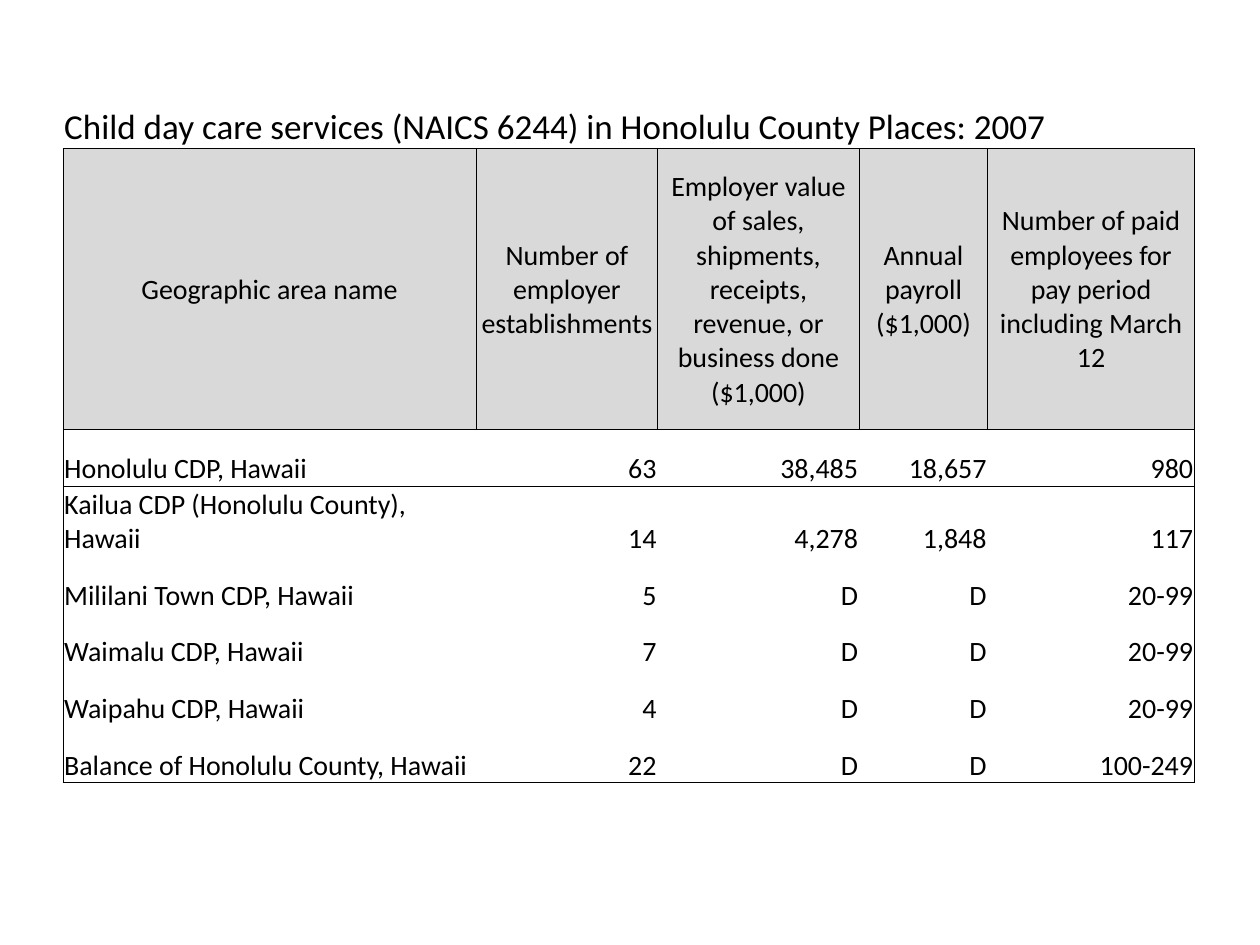
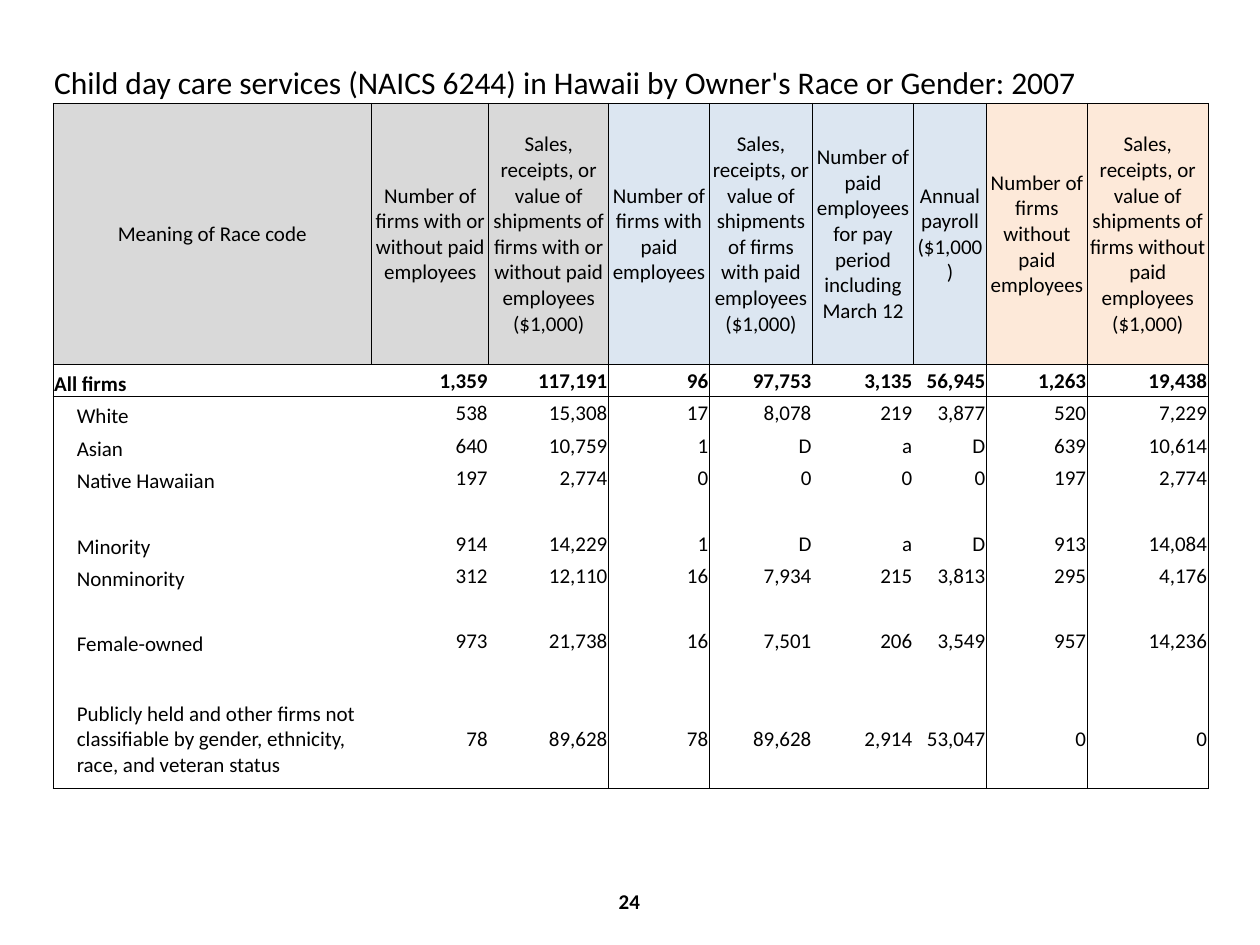
from lxml.etree import SubElement
from pptx import Presentation
from pptx.dml.color import RGBColor
from pptx.enum.text import MSO_ANCHOR, PP_ALIGN
from pptx.oxml.ns import qn
from pptx.util import Inches, Pt

COLORS = {"ink": "000000", "grey": "D9D9D9", "blue": "DCE6F1", "peach": "FDE9D9"}
FONT = "Calibri"
RULE = Pt(0.5)
PLAIN_STYLE = "{2D5ABB26-0587-4C30-8999-92F81FD0307C}"
INSETS = {"margin_left": 0.01, "margin_right": 0.01, "margin_top": 0.01, "margin_bottom": 0}
INDENT = 0.19
SIDES = {"left": "a:lnL", "right": "a:lnR", "top": "a:lnT", "bottom": "a:lnB"}

PLACES = {
    "title": "Child day care services (NAICS 6244) in Honolulu County Places: 2007",
    "title_size": 20, "title_span": 5, "size": 16,
    "corner": (0.5, 0.48),
    "columns": [3.28, 1.44, 1.6, 1.02, 1.64],
    "heights": [0.7, 2.23] + [0.45] * 6,
    "groups": [("grey", [
        "Geographic area name",
        "Number of employer establishments",
        "Employer value of sales, shipments, receipts, revenue, or business done ($1,000)",
        "Annual payroll ($1,000)",
        "Number of paid employees for pay period including March 12",
    ])],
    "body": [
        ("Honolulu CDP, Hawaii", "63", "38,485", "18,657", "980"),
        ("Kailua CDP (Honolulu County), Hawaii", "14", "4,278", "1,848", "117"),
        ("Mililani Town CDP, Hawaii", "5", "D", "D", "20-99"),
        ("Waimalu CDP, Hawaii", "7", "D", "D", "20-99"),
        ("Waipahu CDP, Hawaii", "4", "D", "D", "20-99"),
        ("Balance of Honolulu County, Hawaii", "22", "D", "D", "100-249"),
    ],
    "has_total": False,
    "figure_anchor": MSO_ANCHOR.BOTTOM, "last_label_anchor": MSO_ANCHOR.BOTTOM,
}

OWNERS = {
    "title": "Child day care services (NAICS 6244) in Hawaii by Owner's Race or Gender: 2007",
    "title_size": 18, "title_span": 8, "size": 12,
    "corner": (0.42, 0.42),
    "columns": [2.53, 0.93, 0.95, 0.8, 0.82, 0.8, 0.58, 0.8, 0.96],
    "heights": [0.4, 2.07] + [2.59 / 10] * 10 + [0.78],
    "groups": [
        ("grey", [
            "Meaning of Race code",
            "Number of firms with or without paid employees",
            "Sales, receipts, or value of shipments of firms with or without paid employees ($1,000)",
        ]),
        ("blue", [
            "Number of firms with paid employees",
            "Sales, receipts, or value of shipments of firms with paid employees ($1,000)",
            "Number of paid employees for pay period including March 12",
            "Annual payroll ($1,000)",
        ]),
        ("peach", [
            "Number of firms without paid employees",
            "Sales, receipts, or value of shipments of firms without paid employees ($1,000)",
        ]),
    ],
    "body": [
        ("All firms", "1,359", "117,191", "96", "97,753", "3,135", "56,945", "1,263", "19,438"),
        ("White", "538", "15,308", "17", "8,078", "219", "3,877", "520", "7,229"),
        ("Asian", "640", "10,759", "1", "D", "a", "D", "639", "10,614"),
        ("Native Hawaiian", "197", "2,774", "0", "0", "0", "0", "197", "2,774"),
        ("",) * 9,
        ("Minority", "914", "14,229", "1", "D", "a", "D", "913", "14,084"),
        ("Nonminority", "312", "12,110", "16", "7,934", "215", "3,813", "295", "4,176"),
        ("",) * 9,
        ("Female-owned", "973", "21,738", "16", "7,501", "206", "3,549", "957", "14,236"),
        ("",) * 9,
        ("Publicly held and other firms not classifiable by gender, ethnicity, race, "
         "and veteran status",
         "78", "89,628", "78", "89,628", "2,914", "53,047", "0", "0"),
    ],
    "has_total": True,
    "figure_anchor": MSO_ANCHOR.MIDDLE, "last_label_anchor": MSO_ANCHOR.MIDDLE,
}

PAGE_NUMBER = {"text": "24", "place": (3.83, 6.95, 2.33, 0.4), "size": 12}


def write(paragraph, text, size, align, bold=False):
    paragraph.alignment = align
    if not text:
        paragraph._p.get_or_add_endParaRPr().set("sz", str(size * 100))
        return
    run = paragraph.add_run()
    run.text = text
    for name, value in {"name": FONT, "size": Pt(size), "bold": bold}.items():
        setattr(run.font, name, value)
    run.font.color.rgb = RGBColor.from_string(COLORS["ink"])


def rule_sides(cell, sides):
    for side, tag in SIDES.items():
        if side in sides:
            line = SubElement(cell._tc.get_or_add_tcPr(), qn(tag), w=str(RULE))
            ink = SubElement(line, qn("a:solidFill"))
            SubElement(ink, qn("a:srgbClr"), val=COLORS["ink"])


def format_cell(cell, text, size, align, anchor, sides, fill=None, bold=False, indent=None):
    for name, inset in INSETS.items():
        setattr(cell, name, Inches(inset))
    if indent:
        cell.margin_left = Inches(indent)
    cell.vertical_anchor = anchor
    rule_sides(cell, sides)
    if fill:
        cell.fill.solid()
        cell.fill.fore_color.rgb = RGBColor.from_string(COLORS[fill])
    else:
        cell.fill.background()
    write(cell.text_frame.paragraphs[0], text, size, align, bold)


def add_statistics(slide, data):
    columns, heights, size = data["columns"], data["heights"], data["size"]
    place = [Inches(n) for n in (*data["corner"], sum(columns), sum(heights))]
    table = slide.shapes.add_table(len(heights), len(columns), *place).table
    table.first_row = table.horz_banding = False
    table._tbl.tblPr.find(qn("a:tableStyleId")).text = PLAIN_STYLE
    for column, width in zip(table.columns, columns):
        column.width = Inches(width)
    for row, height in zip(table.rows, heights):
        row.height = Inches(height)

    for c in range(len(columns)):
        format_cell(table.cell(0, c), "" if c else data["title"], data["title_size"],
                    PP_ALIGN.LEFT, MSO_ANCHOR.BOTTOM, {"bottom"})
    table.cell(0, 0).merge(table.cell(0, data["title_span"] - 1))

    headings = [(fill, text) for fill, texts in data["groups"] for text in texts]
    for c, (fill, text) in enumerate(headings):
        format_cell(table.cell(1, c), text, size, PP_ALIGN.CENTER, MSO_ANCHOR.MIDDLE,
                    set(SIDES), fill)

    fills = [fill for fill, _ in headings]
    last = len(data["body"]) - 1
    for r, record in enumerate(data["body"]):
        total = data["has_total"] and r == 0
        for c, text in enumerate(record):
            borders = {
                "left": c == 0 or fills[c - 1] != fills[c],
                "right": c + 1 == len(fills) or fills[c + 1] != fills[c],
                "top": r == 0,
                "bottom": r == last,
            }
            label_anchor = data["last_label_anchor"] if r == last else MSO_ANCHOR.BOTTOM
            indented = c == 0 and data["has_total"] and not total
            format_cell(table.cell(r + 2, c), text, size,
                        PP_ALIGN.RIGHT if c else PP_ALIGN.LEFT,
                        data["figure_anchor"] if c else label_anchor,
                        {side for side, shown in borders.items() if shown},
                        bold=total, indent=INDENT if indented else None)


def add_page_number(slide):
    frame = slide.shapes.add_textbox(*map(Inches, PAGE_NUMBER["place"])).text_frame
    frame.word_wrap = True
    frame.vertical_anchor = MSO_ANCHOR.MIDDLE
    write(frame.paragraphs[0], PAGE_NUMBER["text"], PAGE_NUMBER["size"], PP_ALIGN.CENTER, True)


def main():
    deck = Presentation()
    deck.slide_width, deck.slide_height = Inches(10), Inches(7.5)
    blank = deck.slide_layouts[6]
    add_statistics(deck.slides.add_slide(blank), PLACES)
    owners = deck.slides.add_slide(blank)
    add_page_number(owners)
    add_statistics(owners, OWNERS)
    deck.save("out.pptx")


if __name__ == "__main__":
    main()
